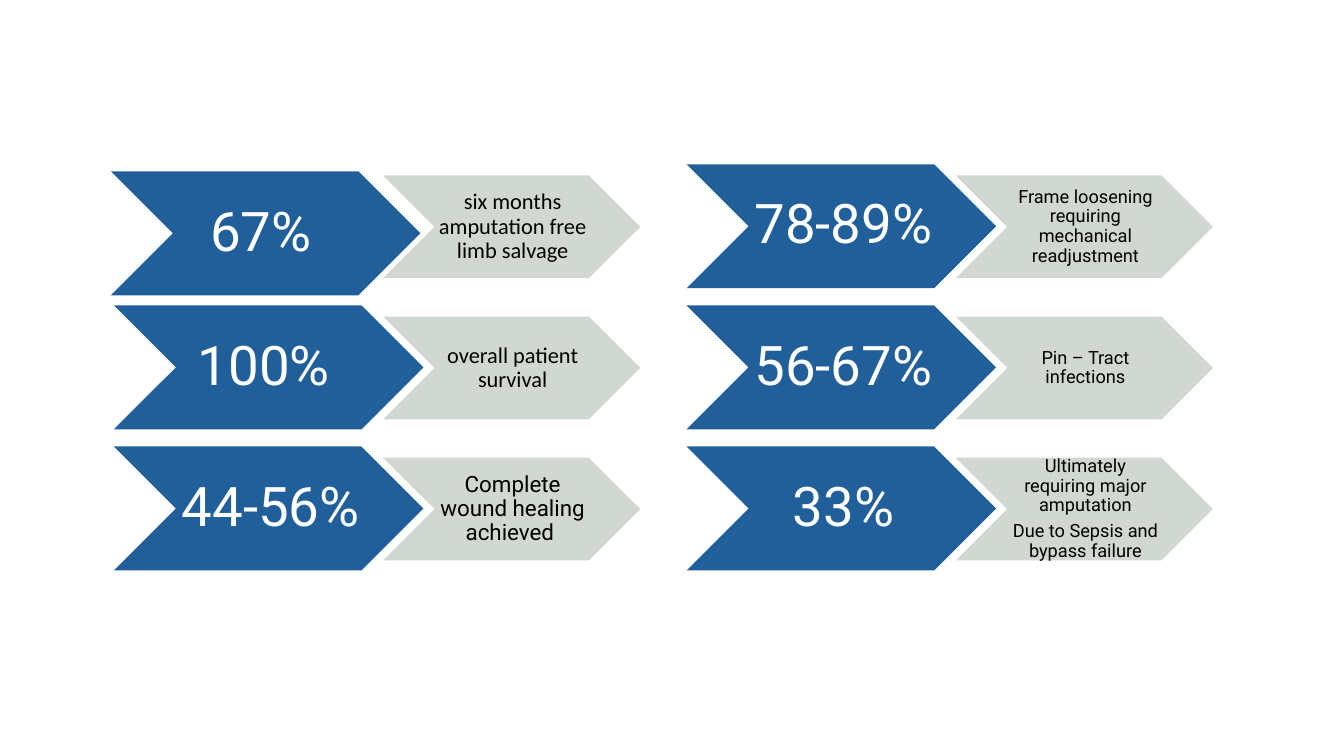
from lxml import etree
from pptx import Presentation
from pptx.dml.color import RGBColor
from pptx.enum.shapes import MSO_SHAPE
from pptx.enum.text import MSO_ANCHOR, PP_ALIGN
from pptx.oxml.ns import qn
from pptx.util import Emu, Pt

CHEVRON = MSO_SHAPE.CHEVRON
MIDDLE = MSO_ANCHOR.MIDDLE
CENTER = PP_ALIGN.CENTER

BLUE = RGBColor(0x21, 0x5F, 0x9A)
SAGE = RGBColor(0xCC, 0xD4, 0xCD)
WHITE = RGBColor(0xFF, 0xFF, 0xFF)
BLACK = RGBColor(0x00, 0x00, 0x00)

EMU_PER_PX = 9144
ROW_TOP = 163
ROW_STEP = 140
RATE_SIZE = (307, 123)
OUTCOME_SIZE = (255, 102)
OUTCOME_DROP = 11

SUCCESSES = [
    ("67% ", ["six months amputation free limb salvage"], "Calibri", (-3, 7)),
    ("100% ", ["overall patient survival"], "Calibri", (0, 0)),
    ("44-56% ", ["Complete wound healing achieved "], "Roboto", (0, 0)),
]
COMPLICATIONS = [
    ("78-89%", ["Frame loosening requiring mechanical readjustment"], "Roboto", (0, 0)),
    ("56-67%", ["Pin – Tract infections"], "Roboto", (0, 0)),
    ("33%", ["Ultimately requiring major amputation",
             "Due to Sepsis and bypass failure"], "Roboto", (0, 0)),
]


def px(length):
    """Turn a length in px into EMU."""
    return Emu(length * EMU_PER_PX)


def add_text(shapes, place, lines, *, font, font_size, color, insets):
    """Add a centred text box with one paragraph per line."""
    box = shapes.add_textbox(*map(px, place))
    frame = box.text_frame
    frame.word_wrap = True
    frame.vertical_anchor = MIDDLE
    frame.margin_left, frame.margin_top, frame.margin_right, frame.margin_bottom = map(px, insets)
    for index, line in enumerate(lines):
        para = frame.add_paragraph() if index else frame.paragraphs[0]
        para.alignment = CENTER
        para.line_spacing = 0.9
        para.space_after = Pt(font_size * 0.35)
        span = para.add_run()
        span.text = line
        span.font.name = font
        span.font.size = Pt(font_size)
        span.font.color.rgb = color


def add_chevron(shapes, place, fill, opacity=100):
    """Add a plain chevron without outline."""
    chevron = shapes.add_shape(CHEVRON, *map(px, place))
    chevron.shadow.inherit = False
    chevron.fill.solid()
    chevron.fill.fore_color.rgb = fill
    chevron.line.fill.background()
    if opacity < 100:
        color = chevron.element.spPr.find(".//" + qn("a:srgbClr"))
        etree.SubElement(color, qn("a:alpha"), val=str(opacity * 1000))


def add_labelled_chevron(shapes, corner, size, lines, *, fill, opacity=100, **text_format):
    """Add a chevron with its text between the notch and the point."""
    left, top = corner
    width, height = size
    notch = height // 2
    add_chevron(shapes, (left, top, width, height), fill, opacity)
    add_text(shapes, (left + notch, top, width - height, height), lines, **text_format)


def add_column(page, rate_left, outcome_left, outcome_font_size, results):
    """Add a group of rows, each a rate followed by its outcome."""
    shapes = page.shapes.add_group_shape().shapes
    for row, (rate, outcome, font, (shift_x, shift_y)) in enumerate(results):
        top = ROW_TOP + row * ROW_STEP
        add_labelled_chevron(shapes, (rate_left + shift_x, top + shift_y), RATE_SIZE, [rate],
                             fill=BLUE, font="Roboto", font_size=39, color=WHITE,
                             insets=(5, 3, 0, 3))
        add_labelled_chevron(shapes, (outcome_left, top + OUTCOME_DROP), OUTCOME_SIZE, outcome,
                             fill=SAGE, opacity=90, font=font, font_size=outcome_font_size,
                             color=BLACK, insets=(2, 1, 0, 1))


def main():
    """Build the slide and save it."""
    deck = Presentation()
    deck.slide_width, deck.slide_height = px(1333), px(750)
    page = deck.slides.add_slide(deck.slide_layouts[6])
    add_column(page, 113, 380, 16, SUCCESSES)
    add_column(page, 681, 948, 13, COMPLICATIONS)
    deck.save("out.pptx")


if __name__ == "__main__":
    main()
